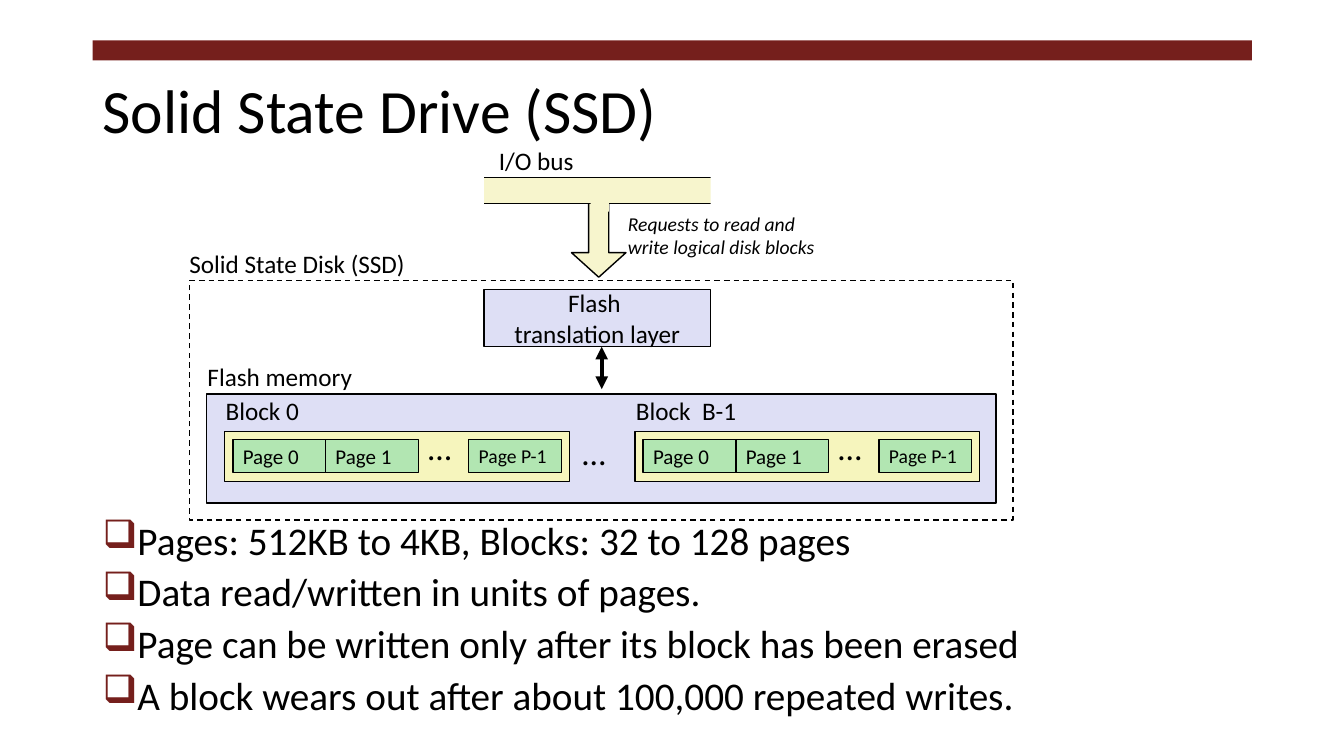
"""Build the slide that explains the structure of a solid state drive."""
from dataclasses import dataclass

import lxml.etree
import pptx
import pptx.dml.color
import pptx.enum.dml
import pptx.enum.shapes
import pptx.enum.text
import pptx.oxml.ns
import pptx.util

Pt = pptx.util.Pt
SHAPE = pptx.enum.shapes.MSO_SHAPE
ALIGN = pptx.enum.text.PP_ALIGN
ANCHOR = pptx.enum.text.MSO_ANCHOR
MAROON, LAVENDER, CREAM, YELLOW, GREEN = "751F1C", "DEDFF5", "F7F5CD", "F6F5BD", "B2E6B2"
BLACK, WHITE = "000000", "FFFFFF"


@dataclass
class Box:
    x: float
    y: float
    w: float
    h: float
    fill: str | None = None
    line: bool = True
    dash: bool = False
    text: str = ""
    size: float = 18
    align: ALIGN = ALIGN.LEFT
    kind: SHAPE = SHAPE.RECTANGLE


@dataclass
class Label:
    x: float
    y: float
    w: float
    h: float
    text: str
    size: float = 18
    italic: bool = False
    wrap: bool = False
    anchor: ANCHOR = ANCHOR.TOP
    spacing: float = 1


@dataclass
class Block:
    x: float
    name: str
    name_w: float


BULLETS = [
    "Pages: 512KB to 4KB, Blocks: 32 to 128 pages",
    "Data read/written in units of pages.",
    "Page can be written only after its block has been erased",
    "A block wears out after about 100,000 repeated writes.",
]
BLOCKS = [Block(160.56, "Block 0", 67.7), Block(453.6, "Block  B-1", 87.1)]
PAGES = [(5.76, "Page 0", 15), (72, "Page 1", 15), (174.24, "Page P-1", 14)]
BOXES = [
    Box(66.24, 28.8, 828, 14.4, MAROON, line=False),
    Box(147.6, 281.5, 563.8, 77.8, LAVENDER),
    Box(408.24, 144, 38.9, 54, CREAM, kind=SHAPE.DOWN_ARROW),
    Box(345.6, 206.64, 162, 41, LAVENDER, text="Flash \ntranslation layer", align=ALIGN.CENTER),
    Box(339.84, 126.72, 174.24, 18.72, CREAM),
    Box(421.92, 138.96, 12.96, 12.24, CREAM, line=False),
    Box(507.6, 110.16, 36, 41.76, WHITE, line=False),
    Box(309.6, 113, 36, 36, WHITE, line=False),
    Box(135.36, 200.16, 588.24, 171.36, dash=True),
]
LABELS = [
    Label(66.24, 28.8, 828, 104.4, "Solid State Drive (SSD)", 44, wrap=True,
          anchor=ANCHOR.MIDDLE, spacing=0.9),
    Label(409, 305.3, 31.7, 36, "…", 24),
    Label(141.1, 254.9, 118.8, 28.8, "Flash memory"),
    Label(128.2, 173.5, 170.6, 28.8, "Solid State Disk (SSD)"),
    Label(441.4, 147.6, 167.8, 41, "Requests to read and\nwrite logical disk blocks", 14,
          italic=True, wrap=True),
    Label(349.2, 100.1, 68.4, 28.8, "I/O bus", anchor=ANCHOR.MIDDLE),
]


def rgb(code: str) -> pptx.dml.color.RGBColor:
    return pptx.dml.color.RGBColor.from_string(code)


def write(tf, text: str, size: float, align: ALIGN = ALIGN.LEFT, italic: bool = False) -> None:
    tf.text = text
    for p in tf.paragraphs:
        p.alignment = align
        for r in p.runs:
            r.font.name = "Calibri"
            r.font.size = Pt(size)
            r.font.italic = italic
            r.font.color.rgb = rgb(BLACK)


def draw_box(s, b: Box) -> None:
    sp = s.shapes.add_shape(b.kind, Pt(b.x), Pt(b.y), Pt(b.w), Pt(b.h))
    sp.shadow.inherit = False
    if b.kind == SHAPE.DOWN_ARROW:
        sp.adjustments[0], sp.adjustments[1] = 0.37, 0.45
    if b.fill:
        sp.fill.solid()
        sp.fill.fore_color.rgb = rgb(b.fill)
    else:
        sp.fill.background()
    if b.line:
        sp.line.color.rgb = rgb(BLACK)
        sp.line.width = Pt(1)
        if b.dash:
            sp.line.dash_style = pptx.enum.dml.MSO_LINE.DASH
    else:
        sp.line.fill.background()
    if b.text:
        tf = sp.text_frame
        tf.word_wrap = False
        tf.vertical_anchor = ANCHOR.MIDDLE
        write(tf, b.text, b.size, b.align)


def draw_label(s, t: Label) -> None:
    tf = s.shapes.add_textbox(Pt(t.x), Pt(t.y), Pt(t.w), Pt(t.h)).text_frame
    tf.word_wrap = t.wrap
    tf.vertical_anchor = t.anchor
    write(tf, t.text, t.size, italic=t.italic)
    for p in tf.paragraphs:
        p.line_spacing = t.spacing


def draw_block(s, b: Block) -> None:
    draw_box(s, Box(b.x, 308.16, 246.24, 36, YELLOW))
    for dx, name, size in PAGES:
        draw_box(s, Box(b.x + dx, 313.92, 66.24, 23.76, GREEN, text=name, size=size))
    draw_label(s, Label(b.x + 138.24, 301.7, 31.7, 36, "…", 24))
    draw_label(s, Label(b.x - 6.5, 278.6, b.name_w, 28.8, b.name))


def draw_double_arrow(s, x: float, top: float, bottom: float) -> None:
    cx = s.shapes.add_connector(pptx.enum.shapes.MSO_CONNECTOR.STRAIGHT,
                                Pt(x), Pt(top), Pt(x), Pt(bottom))
    cx.line.color.rgb = rgb(BLACK)
    cx.line.width = Pt(3)
    qn = pptx.oxml.ns.qn
    for end in ("a:headEnd", "a:tailEnd"):
        lxml.etree.SubElement(cx.line._get_or_add_ln(), qn(end), type="triangle")
    lxml.etree.SubElement(cx._element.spPr, qn("a:effectLst"))


def draw_bullets(s, items: list[str]) -> None:
    tf = s.shapes.add_textbox(Pt(66.24), Pt(371.5), Pt(828), Pt(157.7)).text_frame
    tf.word_wrap = True
    write(tf, "\n".join(items), 28)
    qn = pptx.oxml.ns.qn
    for p in tf.paragraphs:
        p.line_spacing = 0.8
        p.space_before = Pt(10)
        pPr = p._p.get_or_add_pPr()
        pPr.set("marL", str(Pt(18)))
        pPr.set("indent", str(-Pt(18)))
        color = lxml.etree.SubElement(pPr, qn("a:buClr"))
        lxml.etree.SubElement(color, qn("a:srgbClr"), val=MAROON)
        lxml.etree.SubElement(pPr, qn("a:buChar"), char="❑")


def main() -> None:
    prs = pptx.Presentation()
    prs.slide_width, prs.slide_height = Pt(960), Pt(540)
    s = prs.slides.add_slide(prs.slide_layouts[6])
    for box in BOXES:
        draw_box(s, box)
    draw_double_arrow(s, 429.84, 247.68, 277.92)
    for block in BLOCKS:
        draw_block(s, block)
    for label in LABELS:
        draw_label(s, label)
    draw_bullets(s, BULLETS)
    prs.save("out.pptx")


if __name__ == "__main__":
    main()
